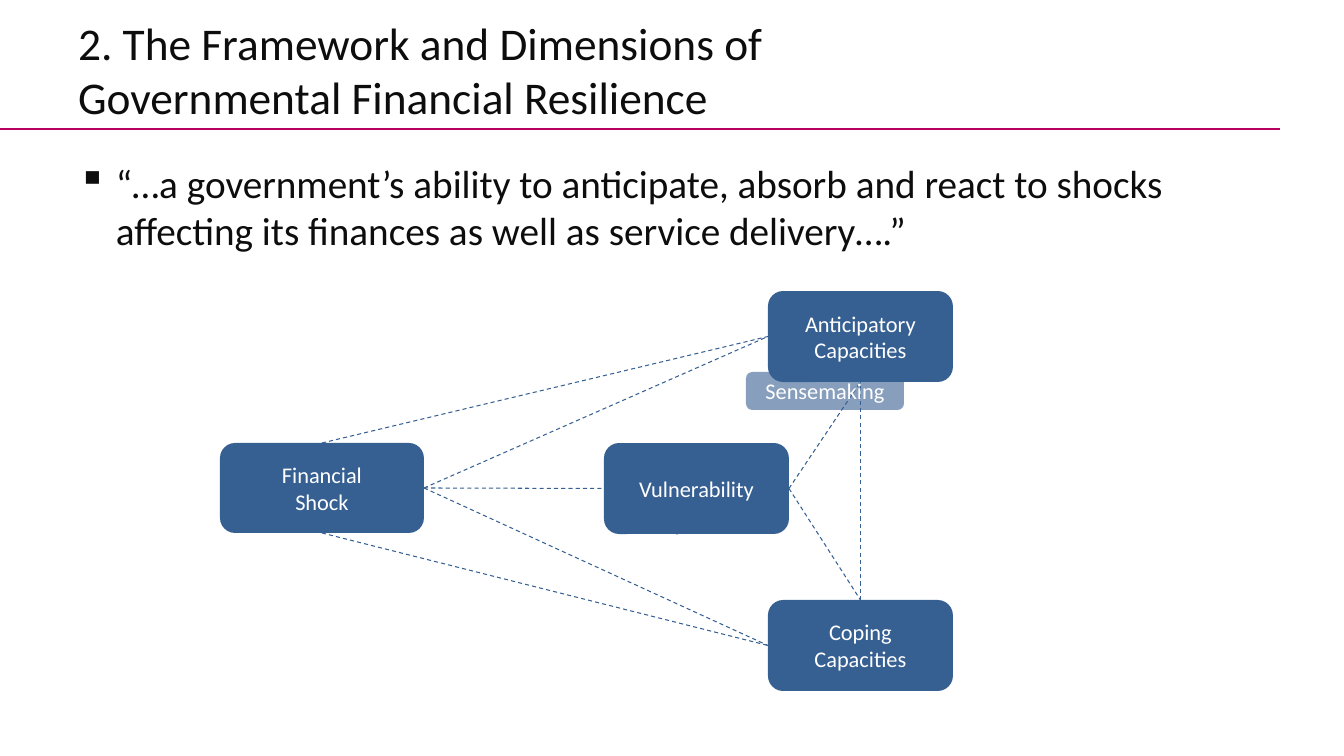
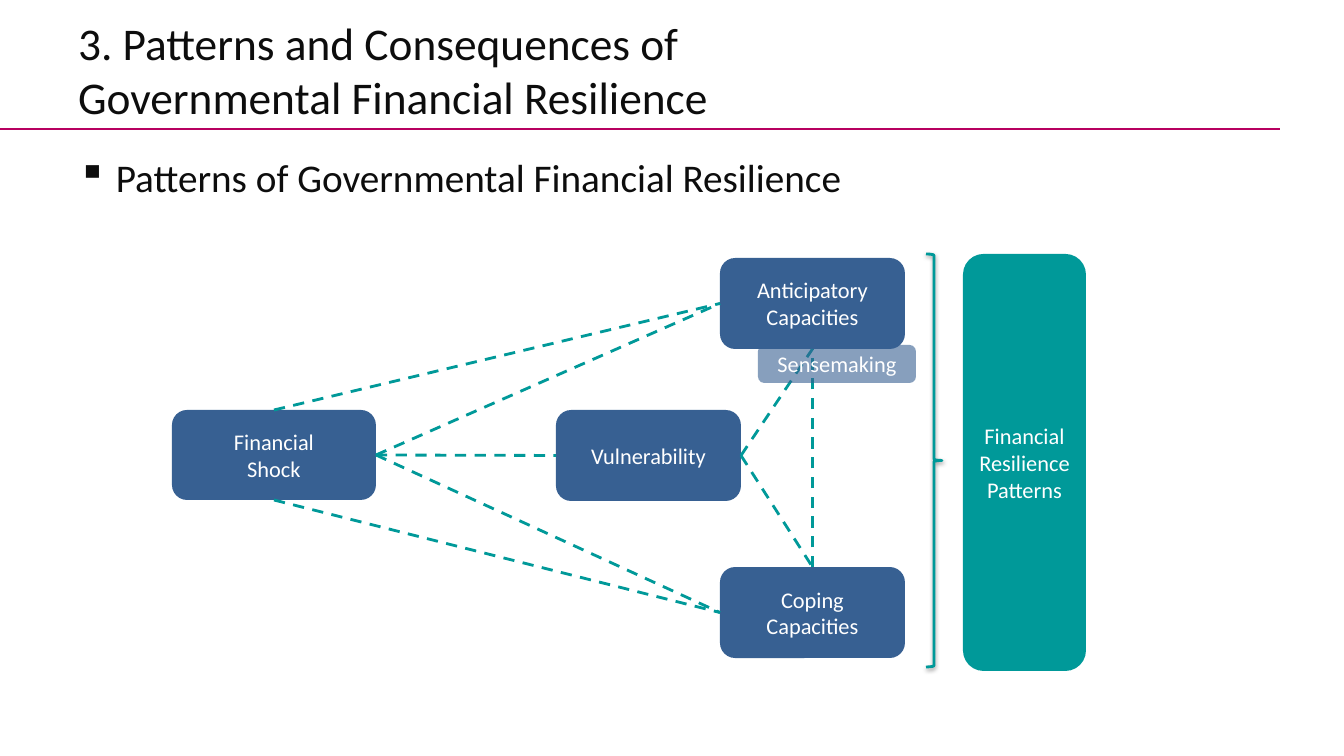
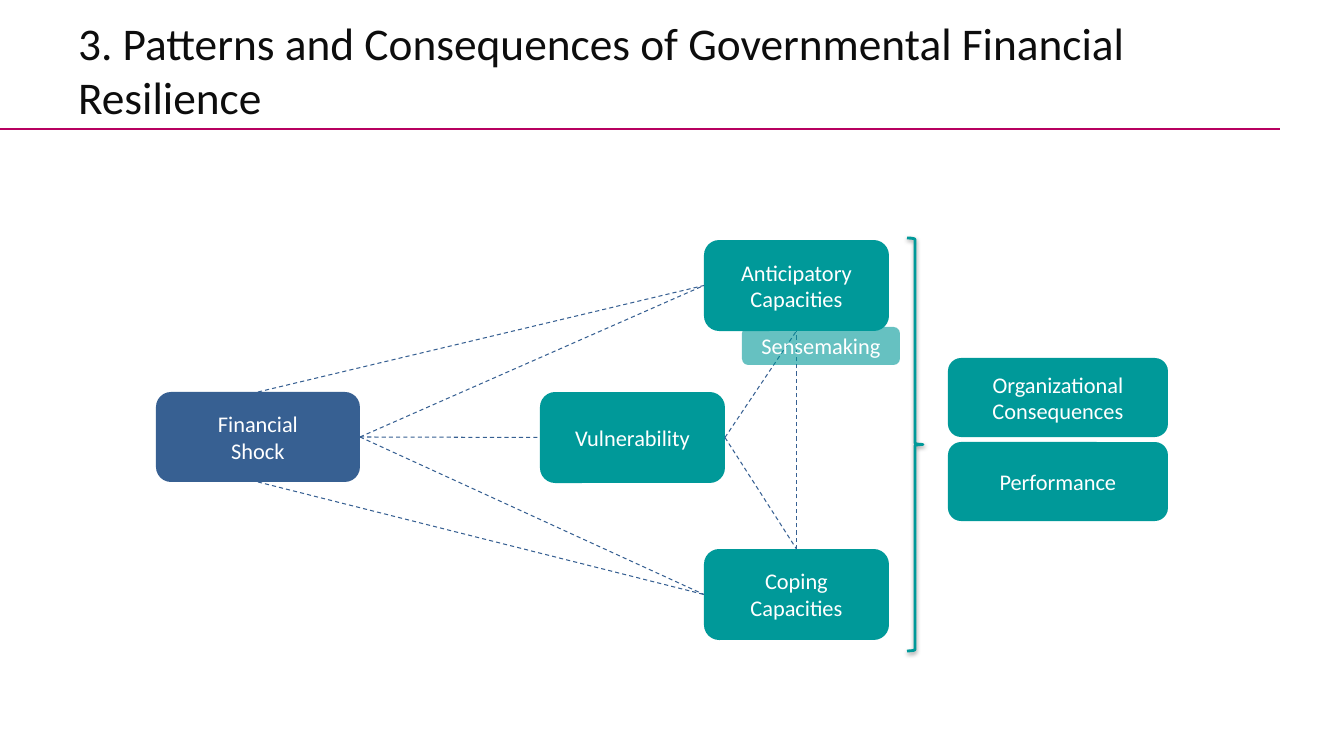
from lxml import etree
from pptx import Presentation
from pptx import util as u
from pptx.dml.color import RGBColor
from pptx.enum import dml, shapes, text
from pptx.oxml import ns

PX = 914400 / 100.8
FONT = "Calibri"
INK = RGBColor(0x0D, 0x0D, 0x0D)
WHITE = RGBColor(0xFF, 0xFF, 0xFF)
MAGENTA = RGBColor(0xB7, 0x00, 0x60)
BLUE = RGBColor(0x37, 0x60, 0x92)
TEAL = RGBColor(0x00, 0x99, 0x99)
STEEL = RGBColor(0x2D, 0x78, 0xA2)
TOP, LEFT, BOTTOM, RIGHT = range(4)

NODES = {
    "shock": ("Financial\nShock", 0, 0, 204, 90),
    "vulnerability": ("Vulnerability", 384, 0, 185, 91),
    "anticipatory": ("Anticipatory Capacities", 548, -152, 185, 91),
    "coping": ("Coping\nCapacities", 548, 157, 185, 91),
}
LINKS = [
    ("shock", RIGHT, "vulnerability", LEFT),
    ("vulnerability", RIGHT, "anticipatory", BOTTOM),
    ("shock", RIGHT, "anticipatory", LEFT),
    ("shock", RIGHT, "coping", LEFT),
    ("shock", BOTTOM, "coping", LEFT),
    ("shock", TOP, "anticipatory", LEFT),
    ("vulnerability", RIGHT, "coping", TOP),
    ("coping", TOP, "anticipatory", BOTTOM),
]


def px(*lengths):
    return [u.Emu(round(length * PX)) for length in lengths]


def add_run(paragraph, content, size, color):
    run = paragraph.add_run()
    run.text = content
    run.font.name = FONT
    run.font.size = u.Pt(size)
    run.font.color.rgb = color


def add_line(slide, start, end, color, width, dashed=False):
    line = slide.shapes.add_connector(shapes.MSO_CONNECTOR.STRAIGHT, *px(*start, *end))
    line.line.color.rgb = color
    line.line.width = u.Pt(width)
    if dashed:
        line.line.dash_style = dml.MSO_LINE.DASH
    etree.SubElement(line._element.spPr, ns.qn("a:effectLst"))
    return line


def add_box(slide, label, left, top, width, height, fill, opacity=100):
    box = slide.shapes.add_shape(
        shapes.MSO_SHAPE.ROUNDED_RECTANGLE, *px(left, top, width, height))
    box.shadow.inherit = False
    box.fill.solid()
    box.fill.fore_color.rgb = fill
    box.line.fill.background()
    if opacity < 100:
        color = box._element.spPr.find(".//" + ns.qn("a:srgbClr"))
        etree.SubElement(color, ns.qn("a:alpha"), val=str(opacity * 1000))
    frame = box.text_frame
    frame.word_wrap = True
    frame.vertical_anchor = text.MSO_ANCHOR.MIDDLE
    for index, line in enumerate(label.split("\n")):
        paragraph = frame.add_paragraph() if index else frame.paragraphs[0]
        paragraph.alignment = text.PP_ALIGN.CENTER
        add_run(paragraph, line, 16, WHITE)
    return box


def add_brace(slide, left, top):
    brace = slide.shapes.add_shape(shapes.MSO_SHAPE.RIGHT_BRACE, *px(left, top, 16, 413))
    brace.fill.background()
    brace.line.color.rgb = TEAL
    brace.line.width = u.Pt(2)
    brace.shadow.inherit = False
    effects = brace._element.spPr.find(ns.qn("a:effectLst"))
    shadow = etree.SubElement(
        effects, ns.qn("a:outerShdw"), blurRad=str(u.Pt(3.1)), dist=str(u.Pt(1.6)),
        dir="5400000", rotWithShape="0")
    color = etree.SubElement(shadow, ns.qn("a:srgbClr"), val="000000")
    etree.SubElement(color, ns.qn("a:alpha"), val="38000")


def add_bullet(slide, top, content):
    box = slide.shapes.add_textbox(*px(68, top, 1210, 492))
    box.text_frame.word_wrap = True
    paragraph = box.text_frame.paragraphs[0]
    properties = paragraph._p.get_or_add_pPr()
    indent = px(38)[0]
    properties.set("marL", str(indent))
    properties.set("indent", str(-indent))
    etree.SubElement(properties, ns.qn("a:buChar"), char="▪")
    add_run(paragraph, content, 28, INK)


def add_slide(presentation, title_lines):
    slide = presentation.slides.add_slide(presentation.slide_layouts[5])
    add_line(slide, (0, 129), (1280, 129), MAGENTA, 2)
    title = slide.shapes.title
    title.left, title.top, title.width, title.height = px(68, 30, 1212, 99)
    frame = title.text_frame
    frame.auto_size = text.MSO_AUTO_SIZE.NONE
    frame.word_wrap = True
    frame.vertical_anchor = text.MSO_ANCHOR.BOTTOM
    paragraph = frame.paragraphs[0]
    paragraph.alignment = text.PP_ALIGN.LEFT
    for index, line in enumerate(title_lines):
        if index:
            paragraph.add_line_break()
        add_run(paragraph, line, 32.4, INK)
    return slide


def add_framework(slide, left, top, fill, link_color, link_width, sense=(586, -65)):
    boxes = {}
    for name, (label, x, y, width, height) in NODES.items():
        color = BLUE if name == "shock" else fill
        boxes[name] = add_box(slide, label, left + x, top + y, width, height, color)
    for source, source_side, target, target_side in LINKS:
        link = add_line(slide, (0, 0), (0, 0), link_color, link_width, dashed=True)
        link.begin_connect(boxes[source], source_side)
        link.end_connect(boxes[target], target_side)
    add_box(slide, "Sensemaking", left + sense[0], top + sense[1], 158, 38, fill, 60)


def main():
    presentation = Presentation()
    presentation.slide_width, presentation.slide_height = px(1344, 756)

    slide = add_slide(presentation, [
        "2. The Framework and Dimensions of", "Governmental Financial Resilience"])
    add_bullet(slide, 154, "“…a government’s ability to anticipate, absorb and react to "
                           "shocks affecting its finances as well as service delivery….”")
    add_line(slide, (678, 516), (677, 535), STEEL, 0.75, dashed=True)
    add_framework(slide, 220, 443, BLUE, BLUE, 0.75, sense=(526, -71))

    slide = add_slide(presentation, [
        "3. Patterns and Consequences of", "Governmental Financial Resilience"])
    add_bullet(slide, 148, "Patterns of Governmental Financial Resilience")
    add_framework(slide, 172, 410, BLUE, TEAL, 2)
    add_brace(slide, 926, 254)
    add_box(slide, "Financial Resilience Patterns", 963, 254, 123, 417, TEAL)

    slide = add_slide(presentation, [
        "3. Patterns and Consequences of Governmental Financial Resilience"])
    add_framework(slide, 156, 392, TEAL, BLUE, 0.75)
    add_brace(slide, 907, 238)
    for index, label in enumerate(["Organizational Consequences", "Performance"]):
        add_box(slide, label, 948, 358 + 84 * index, 220, 79, TEAL)

    presentation.save("out.pptx")


if __name__ == "__main__":
    main()
